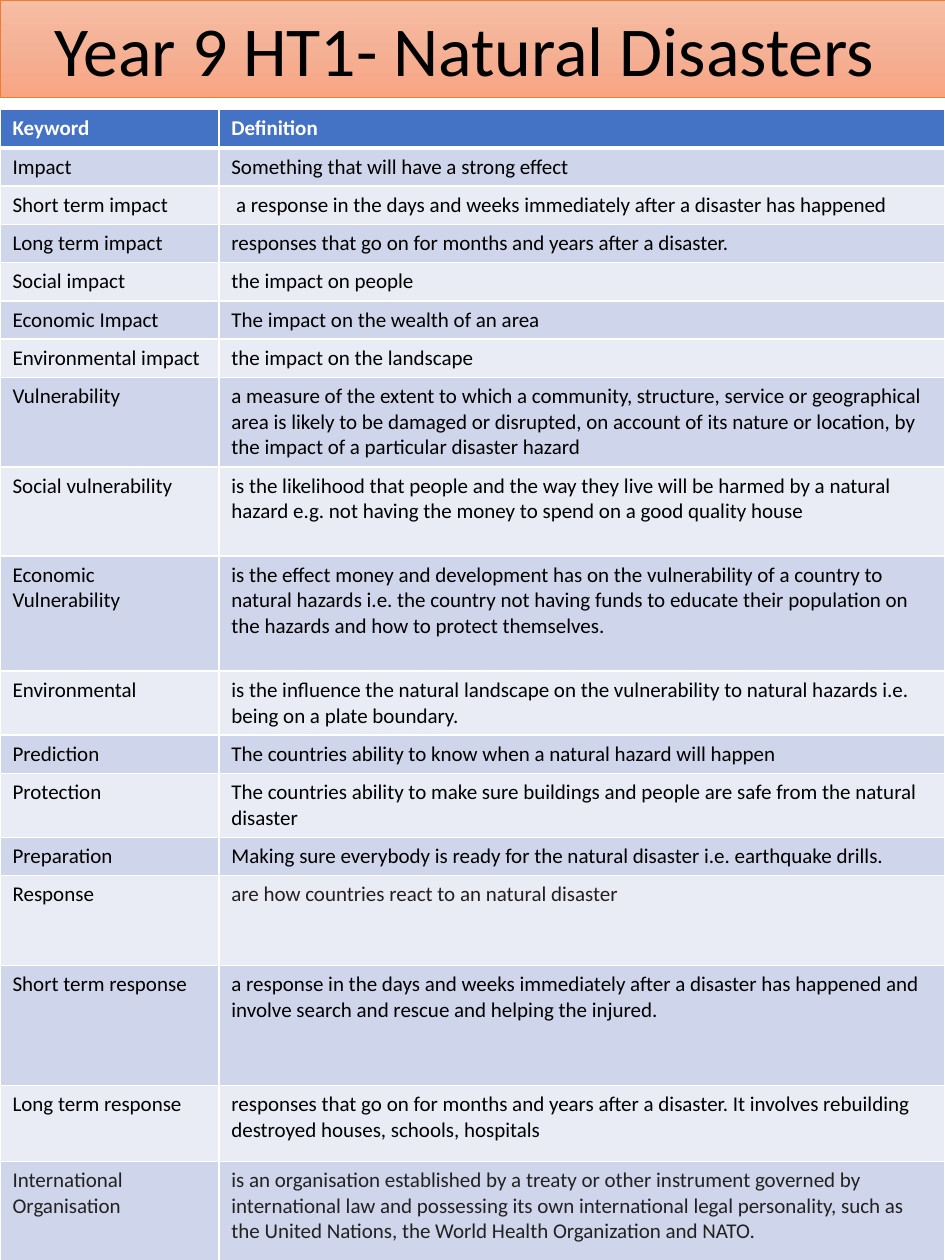
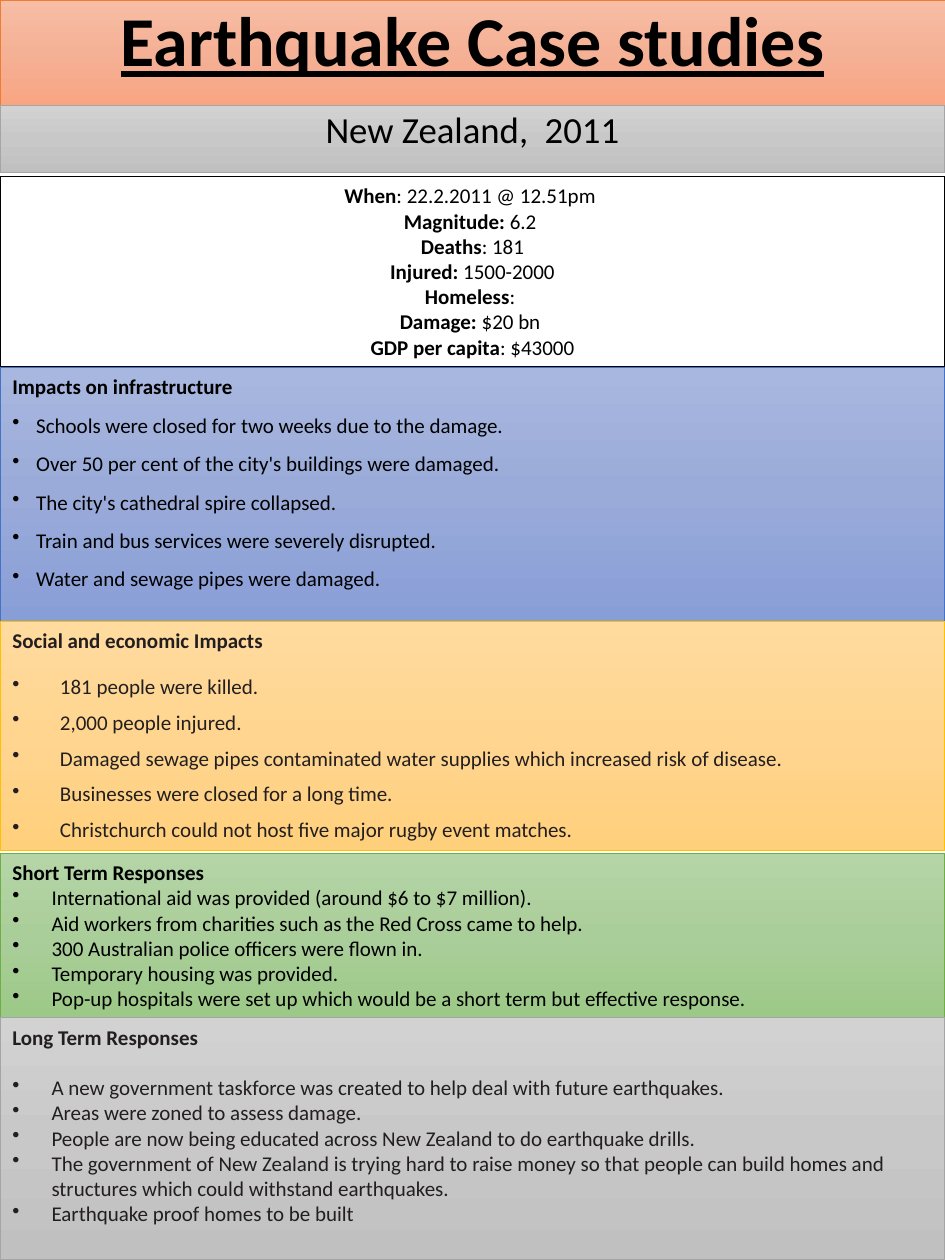
from copy import deepcopy
from dataclasses import dataclass

from lxml import etree
from pptx import Presentation
from pptx.dml.color import RGBColor
from pptx.enum.shapes import MSO_SHAPE
from pptx.enum.text import MSO_ANCHOR, MSO_AUTO_SIZE, PP_ALIGN
from pptx.oxml.ns import qn
from pptx.util import Cm, Pt

RECTANGLE = MSO_SHAPE.RECTANGLE
TOP = MSO_ANCHOR.TOP
NO_AUTOFIT = MSO_AUTO_SIZE.NONE
LEFT, CENTER = PP_ALIGN.LEFT, PP_ALIGN.CENTER
TITLE_ONLY = 5
PAGE_WIDTH, PAGE_HEIGHT = 19.05, 25.4


@dataclass(frozen=True)
class Theme:
    font: str = "Calibri"
    title_size: int = 40
    subtitle_size: int = 21
    body_size: int = 12
    black: str = "000000"
    white: str = "FFFFFF"
    ink: str = "231F20"
    soft_ink: str = "222222"
    header: str = "4472C4"
    row_bands: tuple = ("CFD5EA", "E9EBF5")
    # Each band: top, middle and bottom of the gradient, then the outline
    orange: tuple = ("F7BDA5", "F5B196", "F8A582", "ED7D31")
    grey: tuple = ("D2D2D2", "C8C8C8", "C0C0C0", "A5A5A5")
    blue: tuple = ("A8B7DF", "9AABD9", "889ED7", "4472C4")
    gold: tuple = ("FFDB9E", "FFD590", "FFD07C", "FFC000")
    green: tuple = ("B5D5A7", "AACE9A", "9CC987", "70AD47")


# Keyword, definition, row height in cm
GLOSSARY = [
    ("Keyword", "Definition", 0.76),
    ("Impact", "Something that will have a strong effect", 0.77),
    ("Short term impact",
     " a response in the days and weeks immediately after a disaster has happened", 0.77),
    ("Long term impact", "responses that go on for months and years after a disaster.", 0.77),
    ("Social impact", "the impact on people", 0.77),
    ("Economic Impact", "The impact on the wealth of an area", 0.77),
    ("Environmental impact", "the impact on the landscape", 0.77),
    ("Vulnerability",
     "a measure of the extent to which a community, structure, service or geographical area "
     "is likely to be damaged or disrupted, on account of its nature or location, by the "
     "impact of a particular disaster hazard", 1.8),
    ("Social vulnerability",
     "is the likelihood that people and the way they live will be harmed by a natural hazard "
     "e.g. not having the money to spend on a good quality house", 1.8),
    ("Economic Vulnerability",
     "is the effect money and development has on the vulnerability of a country to natural "
     "hazards i.e. the country not having funds to educate their population on the hazards "
     "and how to protect themselves.", 2.32),
    ("Environmental",
     "is the influence the natural landscape on the vulnerability to natural hazards i.e. "
     "being on a plate boundary.", 1.29),
    ("Prediction", "The countries ability to know when a natural hazard will happen", 0.77),
    ("Protection",
     "The countries ability to make sure buildings and people are safe from the natural "
     "disaster", 1.29),
    ("Preparation",
     "Making sure everybody is ready for the natural disaster i.e. earthquake drills.", 0.77),
    ("Response", "are how countries react to an natural disaster", 1.81),
    ("Short term response",
     "a response in the days and weeks immediately after a disaster has happened and involve "
     "search and rescue and helping the injured.", 2.42),
    ("Long term response",
     "responses that go on for months and years after a disaster. It involves rebuilding "
     "destroyed houses, schools, hospitals", 1.53),
    ("International Organisation",
     "is an organisation established by a treaty or other instrument governed "
     "by international law and possessing its own international legal personality, such as "
     "the United Nations, the World Health Organization and NATO.", 2.0),
]

FACTS = [
    ("When", ": 22.2.2011 @ 12.51pm "),
    ("Magnitude:", " 6.2 "),
    ("Deaths", ": 181"),
    ("Injured:", " 1500-2000"),
    ("Homeless", ": "),
    ("Damage:", " $20 bn "),
    ("GDP per capita", ": $43000"),
]

INFRASTRUCTURE = [
    "Schools were closed for two weeks due to the damage.",
    "Over 50 per cent of the city's buildings were damaged.",
    "The city's cathedral spire collapsed.",
    "Train and bus services were severely disrupted.",
    "Water and sewage pipes were damaged.",
]
SOCIAL_ECONOMIC = [
    "181 people were killed.",
    "2,000 people injured.",
    "Damaged sewage pipes contaminated water supplies which increased risk of disease.",
    "Businesses were closed for a long time.",
    "Christchurch could not host five major rugby event matches.",
]
SHORT_TERM = [
    "International aid was provided (around $6 to $7 million).",
    "Aid workers from charities such as the Red Cross came to help.",
    "300 Australian police officers were flown in.",
    "Temporary housing was provided.",
    "Pop-up hospitals were set up which would be a short term but effective response.",
]
LONG_TERM = [
    "A new government taskforce was created to help deal with future earthquakes.",
    "Areas were zoned to assess damage.",
    "People are now being educated across New Zealand to do earthquake drills.",
    "The government of New Zealand is trying hard to raise money so that people can build "
    "homes and structures which could withstand earthquakes.",
    "Earthquake proof homes to be built",
]


def rgb(value):
    return RGBColor.from_string(value)


class Organiser:
    """Holds the theme and the slide being filled."""

    def __init__(self, theme):
        self.theme = theme
        self.deck = Presentation()
        self.deck.slide_width, self.deck.slide_height = Cm(PAGE_WIDTH), Cm(PAGE_HEIGHT)
        self.slide = None

    def new_slide(self):
        self.slide = self.deck.slides.add_slide(self.deck.slide_layouts[TITLE_ONLY])

    def format_run(self, run, size, color, bold=False, underline=False):
        font = run.font
        font.name, font.size, font.color.rgb = self.theme.font, Pt(size), rgb(color)
        font.bold, font.underline = bold, underline

    def prepare_frame(self, frame):
        frame.word_wrap = True
        frame.auto_size = NO_AUTOFIT
        frame.vertical_anchor = TOP
        frame.margin_left = frame.margin_right = Cm(0.25)
        frame.margin_top = frame.margin_bottom = Cm(0.13)

    def paint_band(self, shape, band):
        fill = shape.fill
        fill.gradient()
        fill.gradient_angle = 270
        stop_list = shape._element.spPr.find(".//" + qn("a:gsLst"))
        stop_list.insert(1, deepcopy(stop_list[0]))
        for stop, color, position in zip(fill.gradient_stops, band, (0, 0.5, 1)):
            stop.color.rgb = rgb(color)
            stop.position = position
        shape.line.color.rgb = rgb(band[3])
        shape.line.width = Pt(0.5)

    def title(self, text, height, bold=False, underline=False, line_spacing=1.0):
        heading = self.slide.shapes.title
        heading.left, heading.top = Cm(0), Cm(0)
        heading.width, heading.height = Cm(PAGE_WIDTH), Cm(height)
        self.paint_band(heading, self.theme.orange)
        self.prepare_frame(heading.text_frame)
        heading.text_frame.text = text
        paragraph = heading.text_frame.paragraphs[0]
        paragraph.alignment, paragraph.line_spacing = CENTER, line_spacing
        self.format_run(paragraph.runs[0], self.theme.title_size, self.theme.black,
                        bold, underline)

    def box(self, top, height):
        shape = self.slide.shapes.add_shape(
            RECTANGLE, Cm(0), Cm(top), Cm(PAGE_WIDTH), Cm(height))
        shape.shadow.inherit = False
        self.prepare_frame(shape.text_frame)
        return shape

    def subtitle(self, text, top, height):
        place = self.box(top, height)
        self.paint_band(place, self.theme.grey)
        place.text_frame.text = text
        paragraph = place.text_frame.paragraphs[0]
        paragraph.alignment, paragraph.line_spacing = CENTER, 0.9
        self.format_run(paragraph.runs[0], self.theme.subtitle_size, self.theme.black)

    def fact_box(self, facts, top, height):
        fact_sheet = self.box(top, height)
        fact_sheet.fill.solid()
        fact_sheet.fill.fore_color.rgb = rgb(self.theme.white)
        fact_sheet.line.color.rgb = rgb(self.theme.black)
        fact_sheet.line.width = Pt(1)
        frame = fact_sheet.text_frame
        frame.text = "\n".join(label for label, _ in facts)
        for paragraph, (_, value) in zip(frame.paragraphs, facts):
            paragraph.alignment = CENTER
            paragraph.add_run().text = value
            for run, bold in zip(paragraph.runs, (True, False)):
                self.format_run(run, self.theme.body_size, self.theme.black, bold)

    def panel(self, heading, points, top, height, band, color, indent,
              heading_after=0, before=0, after=0):
        section = self.box(top, height)
        self.paint_band(section, band)
        frame = section.text_frame
        frame.text = "\n".join([heading, *points])
        for index, paragraph in enumerate(frame.paragraphs):
            is_heading = index == 0
            paragraph.alignment = LEFT
            paragraph.space_before = Pt(before)
            paragraph.space_after = Pt(heading_after if is_heading else after)
            self.format_run(paragraph.runs[0], self.theme.body_size, color, is_heading)
            if not is_heading:
                self.add_bullet(paragraph, indent)

    def add_bullet(self, paragraph, indent):
        properties = paragraph._p.get_or_add_pPr()
        properties.set("marL", str(Cm(indent)))
        properties.set("indent", str(-Cm(indent)))
        etree.SubElement(properties, qn("a:buChar"), char="•")

    def add_borders(self, cell, bottom):
        properties = cell._tc.get_or_add_tcPr()
        for side, width in (("L", 1), ("R", 1), ("T", 1), ("B", bottom)):
            edge = etree.SubElement(properties, qn("a:ln" + side), w=str(Pt(width)))
            solid = etree.SubElement(edge, qn("a:solidFill"))
            etree.SubElement(solid, qn("a:srgbClr"), val=self.theme.white)

    def glossary(self, entries, top, column_widths, ink_colors):
        total = sum(height for _, _, height in entries)
        table = self.slide.shapes.add_table(
            len(entries), 2, Cm(0), Cm(top), Cm(PAGE_WIDTH), Cm(total)).table
        for column, width in zip(table.columns, column_widths):
            column.width = Cm(width)
        for index, (*words, height) in enumerate(entries):
            table.rows[index].height = Cm(height)
            is_header = index == 0
            band = self.theme.header if is_header else self.theme.row_bands[(index - 1) % 2]
            for column, text in enumerate(words):
                cell = table.cell(index, column)
                self.add_borders(cell, 3 if is_header else 1)
                cell.fill.solid()
                cell.fill.fore_color.rgb = rgb(band)
                cell.text_frame.text = text
                color = self.theme.white if is_header else ink_colors.get(text, self.theme.black)
                self.format_run(cell.text_frame.paragraphs[0].runs[0],
                                self.theme.body_size, color, is_header)


def main():
    theme = Theme()
    organiser = Organiser(theme)

    # Keywords and definitions
    organiser.new_slide()
    organiser.title("Year 9 HT1- Natural Disasters ", 1.96)
    response, organisation = GLOSSARY[14], GLOSSARY[17]
    ink_colors = {response[1]: theme.ink, organisation[0]: theme.soft_ink,
                  organisation[1]: theme.soft_ink}
    organiser.glossary(GLOSSARY, 2.21, (4.41, 14.64), ink_colors)

    # Earthquake case study
    organiser.new_slide()
    organiser.title("Earthquake Case studies", 2.13, bold=True, underline=True,
                    line_spacing=0.9)
    organiser.subtitle("New Zealand,  2011", 2.13, 1.35)
    organiser.fact_box(FACTS, 3.56, 3.84)
    organiser.panel("Impacts on infrastructure", INFRASTRUCTURE, 7.41, 5.11,
                    theme.blue, theme.black, 0.48, before=7.5)
    organiser.panel("Social and economic Impacts", SOCIAL_ECONOMIC, 12.52, 4.62,
                    theme.gold, theme.ink, 0.96, heading_after=12, after=6)
    organiser.panel("Short Term Responses", SHORT_TERM, 17.2, 3.32,
                    theme.green, theme.black, 0.79)
    organiser.panel("Long Term Responses", LONG_TERM, 20.52, 4.88,
                    theme.grey, theme.ink, 0.79, heading_after=14.4)

    organiser.deck.save("out.pptx")


if __name__ == "__main__":
    main()
